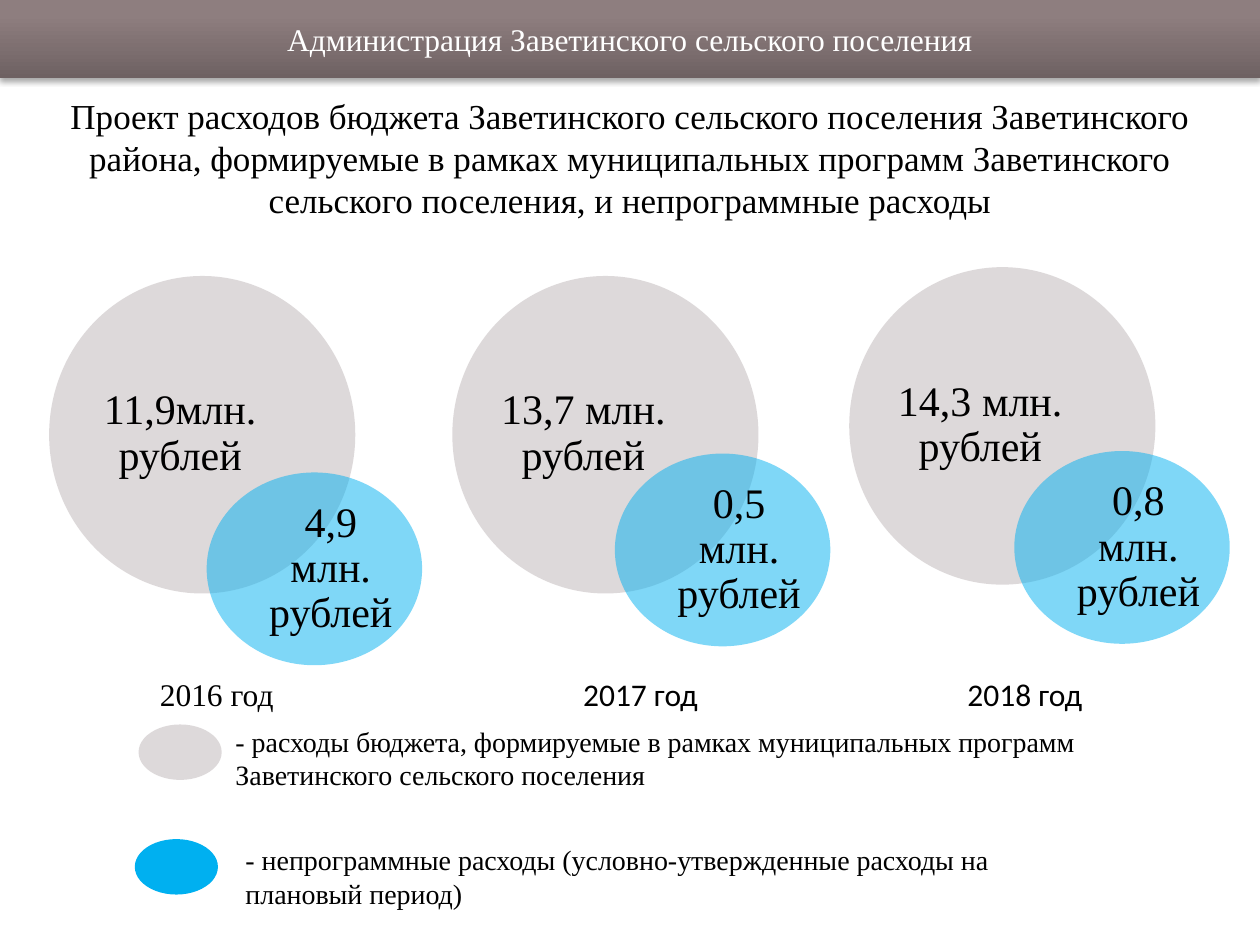
from dataclasses import dataclass

from lxml import etree
from pptx import Presentation
from pptx.dml.color import RGBColor
from pptx.enum.shapes import MSO_SHAPE as Shape
from pptx.enum.text import MSO_ANCHOR as Anchor, MSO_AUTO_SIZE as AutoSize, PP_ALIGN as Align
from pptx.oxml import parse_xml
from pptx.oxml.ns import nsdecls, qn
from pptx.util import Inches, Pt


@dataclass(frozen=True)
class Theme:
    serif: str = "Times New Roman"
    sans: str = "Calibri"
    ink: str = "000000"
    on_band: str = "FFFFFF"
    program: str = "BDB5B6"
    other: str = "00B0F0"
    band: tuple = ((0, "6E6162"), (80, "8E7E7F"), (100, "8F7E80"))
    title: int = 20
    amount: int = 24
    label: int = 18
    legend: int = 16


THEME = Theme()

# Content
HEADER = "Администрация Заветинского сельского поселения"
TITLE = ("Проект расходов бюджета Заветинского сельского поселения Заветинского района, "
         "формируемые в рамках муниципальных программ Заветинского сельского поселения, "
         "и непрограммные расходы")
# (amount, left, top) of both circles, then (label, left, width, font) of the year
YEARS = [
    (("11,9млн. рублей", 0.39, 2.19), ("4,9 млн. рублей", 1.64, 3.75),
     ("2016 год", 1.17, 1.56, THEME.serif)),
    (("13,7 млн. рублей", 3.59, 2.19), ("0,5 млн. рублей", 4.88, 3.6),
     ("2017 год", 4.53, 1.56, THEME.sans)),
    (("14,3 млн. рублей", 6.74, 2.12), ("0,8 млн. рублей", 8.05, 3.58),
     ("2018 год", 7.58, 1.88, THEME.sans)),
]
# (text, text box, marker position, colour, opacity in percent)
LEGEND = [
    ("- расходы бюджета, формируемые в рамках муниципальных программ "
     "Заветинского сельского поселения",
     (1.77, 5.7, 7.72, 0.64), (1.1, 5.75), THEME.program, 50),
    ("- непрограммные расходы (условно-утвержденные расходы на плановый период)",
     (1.85, 6.64, 6.77, 0.64), (1.07, 6.66), THEME.other, 100),
]

# Circle size, then offset and size of the amount inside it
PROGRAM_SIZE, PROGRAM_TEXT = (2.43, 2.52), (0.34, 0.29, 1.4, 1.93)
OTHER_SIZE, OTHER_TEXT = (1.71, 1.53), (0.49, 0.18, 0.99, 1.17)
MARKER_SIZE = (0.66, 0.44)
YEAR_TOP, YEAR_HEIGHT = 5.31, 0.4


def inches(box):
    return [Inches(value) for value in box]


def write(frame, text, size, font=THEME.serif, color=THEME.ink, align=Align.LEFT,
          anchor=Anchor.TOP):
    frame.text = text
    frame.word_wrap = True
    frame.auto_size = AutoSize.NONE
    frame.vertical_anchor = anchor
    paragraph = frame.paragraphs[0]
    paragraph.alignment = align
    run_font = paragraph.runs[0].font
    run_font.name, run_font.size = font, Pt(size)
    run_font.color.rgb = RGBColor.from_string(color)


def add_text(slide, box, text, size, **style):
    frame = slide.shapes.add_textbox(*inches(box)).text_frame
    write(frame, text, size, **style)
    return frame


def add_ellipse(slide, box, color, opacity):
    ellipse = slide.shapes.add_shape(Shape.OVAL, *inches(box))
    ellipse.shadow.inherit = False
    ellipse.line.fill.background()
    ellipse.fill.solid()
    ellipse.fill.fore_color.rgb = RGBColor.from_string(color)
    if opacity < 100:
        rgb = ellipse.fill._xPr.find(f"{qn('a:solidFill')}/{qn('a:srgbClr')}")
        etree.SubElement(rgb, qn("a:alpha"), val=str(opacity * 1000))


def add_amount_circle(slide, amount, left, top, size, text_area, color):
    add_ellipse(slide, (left, top, *size), color, 50)
    dx, dy, width, height = text_area
    frame = add_text(slide, (left + dx, top + dy, width, height), amount, THEME.amount,
                     align=Align.CENTER, anchor=Anchor.MIDDLE)
    frame.margin_left = frame.margin_right = frame.margin_top = frame.margin_bottom = 0
    frame.paragraphs[0].line_spacing = 0.9


def add_header(slide):
    band = slide.shapes.add_shape(Shape.RECTANGLE, *inches((0, 0, 10, 0.62)))
    band.line.fill.background()
    stops = "".join(f'<a:gs pos="{pos * 1000}"><a:srgbClr val="{color}"/></a:gs>'
                    for pos, color in THEME.band)
    gradient = parse_xml(f'<a:gradFill {nsdecls("a")} rotWithShape="1"><a:gsLst>{stops}</a:gsLst>'
                         '<a:lin ang="16200000" scaled="0"/></a:gradFill>')
    shadow = parse_xml(f'<a:effectLst {nsdecls("a")}><a:outerShdw blurRad="{Pt(3.1)}" '
                       f'dist="{Pt(1.8)}" dir="5400000" rotWithShape="0"><a:srgbClr val="000000">'
                       '<a:alpha val="35000"/></a:srgbClr></a:outerShdw></a:effectLst>')
    properties = band._element.spPr
    properties.find(qn("a:prstGeom")).addnext(gradient)
    properties.append(shadow)
    write(band.text_frame, HEADER, THEME.label, color=THEME.on_band,
          align=Align.CENTER, anchor=Anchor.MIDDLE)


def main():
    deck = Presentation()
    deck.slide_width, deck.slide_height = Inches(10), Inches(7.5)
    slide = deck.slides.add_slide(deck.slide_layouts[5])

    # Header band and title
    add_header(slide)
    title = slide.shapes.title
    title.left, title.top, title.width, title.height = inches((0, 0.7, 10, 1.11))
    write(title.text_frame, TITLE, THEME.title, align=Align.CENTER)

    # Pair of circles and label for each year
    for program, other, (year, left, width, font) in YEARS:
        add_amount_circle(slide, *program, PROGRAM_SIZE, PROGRAM_TEXT, THEME.program)
        add_amount_circle(slide, *other, OTHER_SIZE, OTHER_TEXT, THEME.other)
        add_text(slide, (left, YEAR_TOP, width, YEAR_HEIGHT), year, THEME.label, font=font)

    # Legend
    for text, box, marker, color, opacity in LEGEND:
        add_ellipse(slide, (*marker, *MARKER_SIZE), color, opacity)
        add_text(slide, box, text, THEME.legend)

    deck.save("out.pptx")


if __name__ == "__main__":
    main()
